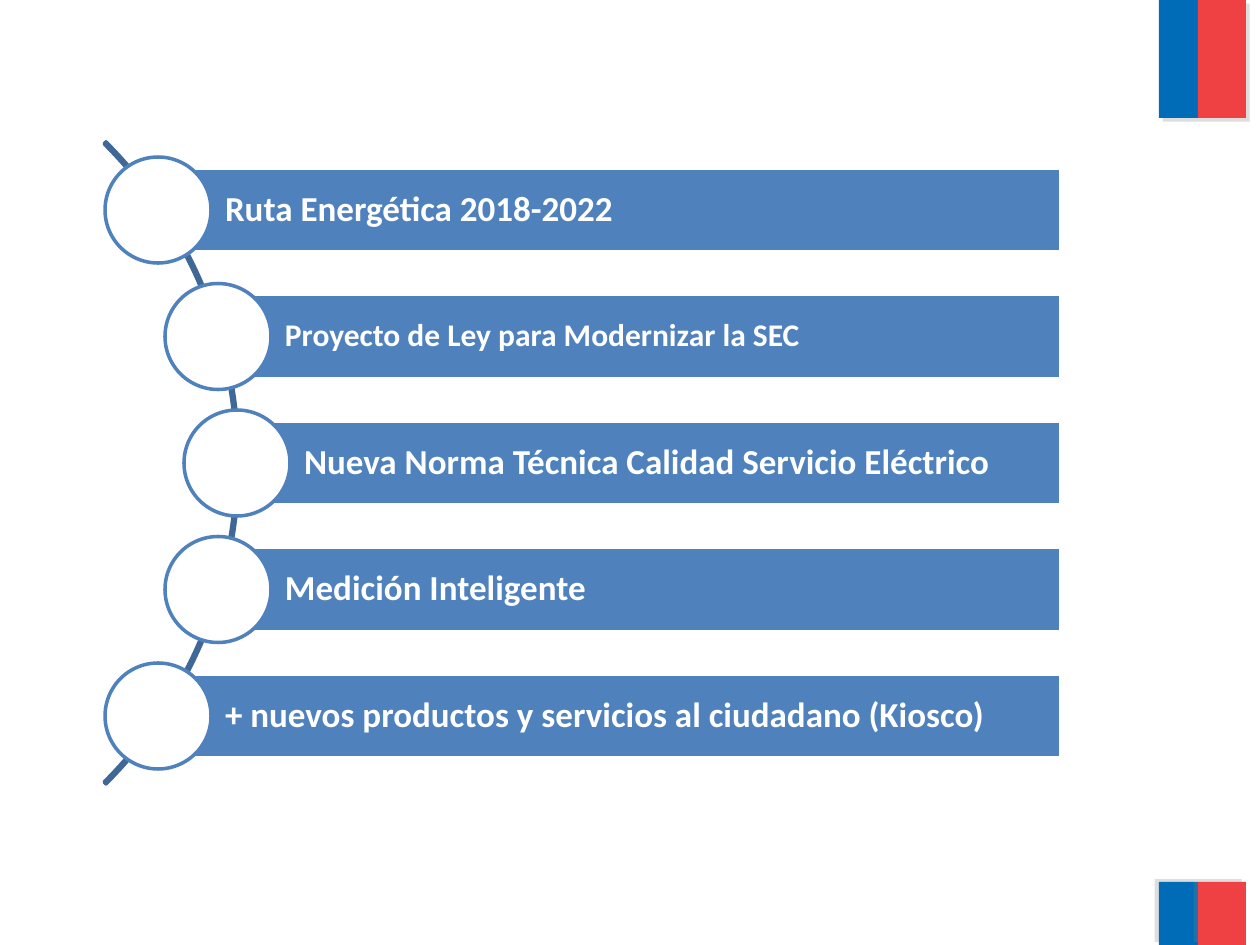
from dataclasses import dataclass

from lxml import etree
from pptx import Presentation
from pptx import util as u
from pptx.dml.color import RGBColor
from pptx.enum import shapes, text
from pptx.oxml import ns

EMU_PER_PX = 914400 / 126


@dataclass(frozen=True)
class Theme:
    font: str = "Calibri"
    white: str = "FFFFFF"
    bar: str = "4F81BD"
    arc: str = "3F6797"
    flag_blue: str = "006CB7"
    flag_red: str = "EF4144"
    shadow: str = "808080"
    line_pt: int = 2
    large_pt: int = 20
    small_pt: int = 18


THEME = Theme()
ROUTE = (
    ("Ruta Energética 2018-2022", 158, THEME.large_pt),
    ("Proyecto de Ley para Modernizar la SEC", 218, THEME.small_pt),
    ("Nueva Norma Técnica Calidad Servicio Eléctrico", 237, THEME.large_pt),
    ("Medición Inteligente", 218, THEME.large_pt),
    ("+ nuevos productos y servicios al ciudadano (Kiosco)", 158, THEME.large_pt),
)
FIRST_CENTER, LAST_CENTER = 210, 716
BAR_RIGHT, BAR_HEIGHT, NODE_SIZE = 1061, 84, 106


def px(length):
    return u.Emu(round(length * EMU_PER_PX))


def apply(target, values):
    for name, value in values.items():
        setattr(target, name, value)


def add_figure(slide, preset, box, fill=None, line=None):
    figure = slide.shapes.add_shape(preset, *map(px, box))
    figure.shadow.inherit = False
    if fill:
        figure.fill.solid()
        figure.fill.fore_color.rgb = RGBColor.from_string(fill)
    else:
        figure.fill.background()
    if line:
        figure.line.color.rgb = RGBColor.from_string(line)
        figure.line.width = u.Pt(THEME.line_pt)
    else:
        figure.line.fill.background()
    return figure


def add_shadow(figure, degrees):
    effects = figure._element.spPr.find(ns.qn("a:effectLst"))
    shadow = etree.SubElement(effects, ns.qn("a:outerShdw"), blurRad="0",
                              dist=str(u.Pt(3)), dir=str(degrees * 60000),
                              algn="ctr", rotWithShape="0")
    color = etree.SubElement(shadow, ns.qn("a:srgbClr"), val=THEME.shadow)
    etree.SubElement(color, ns.qn("a:alpha"), val="25000")


def add_flag(slide, top, height, shadow_degrees):
    for left, width, color in ((1159, 39, THEME.flag_blue), (1198, 48, THEME.flag_red)):
        stripe = add_figure(slide, shapes.MSO_SHAPE.RECTANGLE,
                            (left, top, width, height), color)
        add_shadow(stripe, shadow_degrees)


def add_arc(slide):
    arc = add_figure(slide, shapes.MSO_SHAPE.BLOCK_ARC, (-669, 9, 908, 908), line=THEME.arc)
    for index, value in enumerate((189, 27, 0.003)):
        arc.adjustments[index] = value


def add_bar(slide, label, left, center, size):
    bar = add_figure(slide, shapes.MSO_SHAPE.RECTANGLE,
                     (left, center - BAR_HEIGHT / 2, BAR_RIGHT - left, BAR_HEIGHT),
                     THEME.bar, THEME.white)
    apply(bar.text_frame, {
        "word_wrap": True,
        "vertical_anchor": text.MSO_ANCHOR.MIDDLE,
        "margin_left": px(67),
        "margin_right": px(7),
        "margin_top": px(7),
        "margin_bottom": px(7),
    })
    paragraph = bar.text_frame.paragraphs[0]
    apply(paragraph, {"alignment": text.PP_ALIGN.LEFT, "line_spacing": 0.9})
    run = paragraph.add_run()
    run.text = label
    apply(run.font, {"name": THEME.font, "size": u.Pt(size), "bold": True})
    run.font.color.rgb = RGBColor.from_string(THEME.white)


def add_node(slide, center_x, center_y):
    radius = NODE_SIZE / 2
    add_figure(slide, shapes.MSO_SHAPE.OVAL,
               (center_x - radius, center_y - radius, NODE_SIZE, NODE_SIZE),
               THEME.white, THEME.bar)


def main():
    deck = Presentation()
    apply(deck, {"slide_width": px(1260), "slide_height": px(945)})
    slide = deck.slides.add_slide(deck.slide_layouts[6])
    add_flag(slide, 0, 118, 45)
    add_flag(slide, 882, 63, 215)
    add_arc(slide)
    pitch = (LAST_CENTER - FIRST_CENTER) / (len(ROUTE) - 1)
    for index, (label, left, size) in enumerate(ROUTE):
        center = FIRST_CENTER + index * pitch
        add_bar(slide, label, left, center, size)
        add_node(slide, left, center)
    deck.save("out.pptx")


if __name__ == "__main__":
    main()
